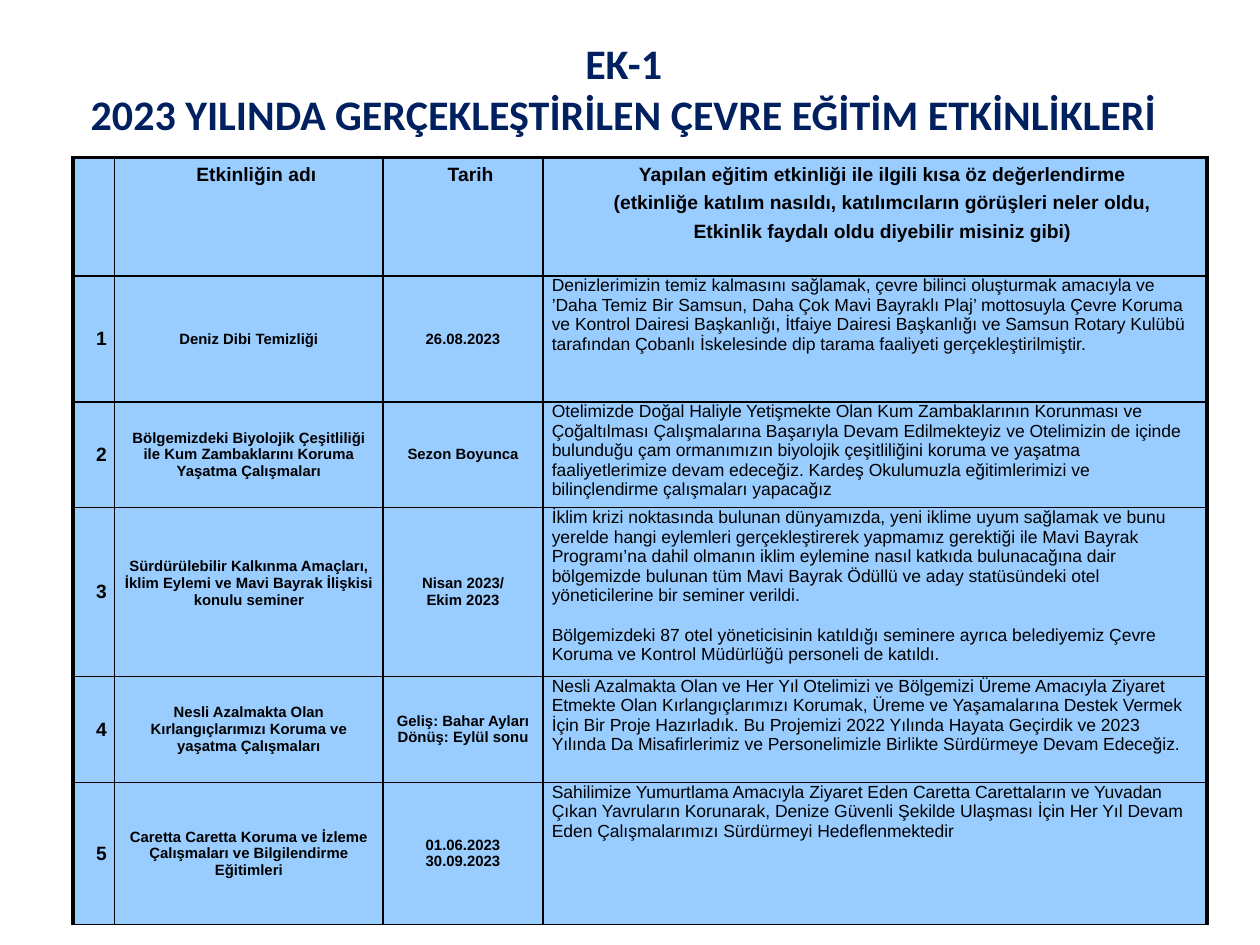
from dataclasses import dataclass

from lxml.etree import SubElement
from pptx import Presentation
from pptx.dml.color import RGBColor
from pptx.enum.text import MSO_ANCHOR, MSO_AUTO_SIZE, PP_ALIGN
from pptx.oxml.ns import qn
from pptx.util import Inches, Pt


@dataclass(frozen=True)
class Theme:
    navy: str = "002060"
    ink: str = "000000"
    sky: str = "99CCFF"
    head: str = "Calibri"
    body: str = "Arial"
    title: float = 24
    label: float = 11
    name: float = 8.5
    note: float = 10
    thin: float = 1
    thick: float = 2.25


@dataclass(frozen=True)
class Style:
    size: float
    bold: bool = True
    align: PP_ALIGN = PP_ALIGN.CENTER
    font: str = Theme.body
    color: str = Theme.ink
    indent: float = 0
    gap: float = 0


T = Theme()
WIDE, HIGH = 10, 7.5
COLS = [0.33, 2.13, 1.27, 5.27]
ROWS = [0.94, 1, 0.84, 1.34, 0.84, 1.13]

TITLE = Style(T.title, font=T.head, color=T.navy)
LABEL = Style(T.label, indent=0.12, gap=4)
NAME = Style(T.name)
NOTE = Style(T.note, bold=False, align=PP_ALIGN.LEFT, gap=11.5)

HEADS = [
    [],
    ["Etkinliğin adı"],
    ["Tarih"],
    [
        "Yapılan eğitim etkinliği ile ilgili kısa öz değerlendirme",
        "(etkinliğe katılım nasıldı, katılımcıların görüşleri neler oldu,",
        "Etkinlik faydalı oldu diyebilir misiniz gibi)",
    ],
]

EVENTS = [
    (
        ["Deniz Dibi Temizliği"],
        ["26.08.2023"],
        ["Denizlerimizin temiz kalmasını sağlamak, çevre bilinci oluşturmak amacıyla ve "
         "’Daha Temiz Bir Samsun, Daha Çok Mavi Bayraklı Plaj’ mottosuyla Çevre Koruma "
         "ve Kontrol Dairesi Başkanlığı, İtfaiye Dairesi Başkanlığı ve Samsun Rotary Kulübü "
         "tarafından Çobanlı İskelesinde dip tarama faaliyeti gerçekleştirilmiştir."],
    ),
    (
        ["Bölgemizdeki Biyolojik Çeşitliliği ile Kum Zambaklarını Koruma Yaşatma Çalışmaları"],
        ["Sezon Boyunca"],
        ["Otelimizde Doğal Haliyle Yetişmekte Olan Kum Zambaklarının Korunması ve "
         "Çoğaltılması Çalışmalarına Başarıyla Devam Edilmekteyiz ve Otelimizin de içinde "
         "bulunduğu çam ormanımızın biyolojik çeşitliliğini koruma ve yaşatma "
         "faaliyetlerimize devam edeceğiz. Kardeş Okulumuzla eğitimlerimizi ve "
         "bilinçlendirme çalışmaları yapacağız"],
    ),
    (
        ["Sürdürülebilir Kalkınma Amaçları, İklim Eylemi ve Mavi Bayrak İlişkisi konulu seminer"],
        ["Nisan 2023/", "Ekim 2023"],
        ["İklim krizi noktasında bulunan dünyamızda, yeni iklime uyum sağlamak ve bunu "
         "yerelde hangi eylemleri gerçekleştirerek yapmamız gerektiği ile Mavi Bayrak "
         "Programı’na dahil olmanın iklim eylemine nasıl katkıda bulunacağına dair "
         "bölgemizde bulunan tüm Mavi Bayrak Ödüllü ve aday statüsündeki otel "
         "yöneticilerine bir seminer verildi.",
         "Bölgemizdeki 87 otel yöneticisinin katıldığı seminere ayrıca belediyemiz Çevre "
         "Koruma ve Kontrol Müdürlüğü personeli de katıldı."],
    ),
    (
        ["Nesli Azalmakta Olan Kırlangıçlarımızı Koruma ve yaşatma Çalışmaları"],
        ["Geliş: Bahar Ayları", "Dönüş: Eylül sonu"],
        ["Nesli Azalmakta Olan ve Her Yıl Otelimizi ve Bölgemizi Üreme Amacıyla Ziyaret "
         "Etmekte Olan Kırlangıçlarımızı Korumak, Üreme ve Yaşamalarına Destek Vermek "
         "İçin Bir Proje Hazırladık. Bu Projemizi 2022 Yılında Hayata Geçirdik ve 2023 "
         "Yılında Da Misafirlerimiz ve Personelimizle Birlikte Sürdürmeye Devam Edeceğiz."],
    ),
    (
        ["Caretta Caretta Koruma ve İzleme Çalışmaları ve Bilgilendirme Eğitimleri"],
        ["01.06.2023", "30.09.2023"],
        ["Sahilimize Yumurtlama Amacıyla Ziyaret Eden Caretta Carettaların ve Yuvadan "
         "Çıkan Yavruların Korunarak, Denize Güvenli Şekilde Ulaşması İçin Her Yıl Devam "
         "Eden Çalışmalarımızı Sürdürmeyi Hedeflenmektedir"],
    ),
]


def write(frame, lines, style):
    for i, line in enumerate(lines):
        para = frame.add_paragraph() if i else frame.paragraphs[0]
        para.alignment = style.align
        if style.indent:
            props = para._p.get_or_add_pPr()
            props.set("marL", str(Inches(style.indent)))
            props.set("indent", "0")
        if i and style.gap:
            para.space_before = Pt(style.gap)
        run = para.add_run()
        run.text = line
        run.font.name = style.font
        run.font.size = Pt(style.size)
        run.font.bold = style.bold
        run.font.color.rgb = RGBColor.from_string(style.color)


def border(cell, row, col):
    edges = {"lnL": col == 0, "lnR": col == len(COLS) - 1, "lnT": row == 0, "lnB": False}
    props = cell._tc.get_or_add_tcPr()
    for tag, outer in edges.items():
        line = SubElement(props, qn("a:" + tag), w=str(Pt(T.thick if outer else T.thin)))
        fill = SubElement(line, qn("a:solidFill"))
        SubElement(fill, qn("a:srgbClr"), val=T.ink)


def heading(slide, box, lines):
    shape = slide.shapes.add_textbox(*map(Inches, box))
    frame = shape.text_frame
    frame.word_wrap = False
    frame.auto_size = MSO_AUTO_SIZE.SHAPE_TO_FIT_TEXT
    write(frame, lines, TITLE)


def grid(slide, box, heads, events):
    left, top, wide, high = box
    table = slide.shapes.add_table(
        len(ROWS), len(COLS), *map(Inches, box)).table
    table.first_row = table.horz_banding = False
    for col, part in zip(table.columns, COLS):
        col.width = Inches(wide * part / sum(COLS))
    for row, part in zip(table.rows, ROWS):
        row.height = Inches(high * part / sum(ROWS))
    data = [heads] + [([str(n)], *event) for n, event in enumerate(events, 1)]
    for r, cells in enumerate(data):
        for c, lines in enumerate(cells):
            cell = table.cell(r, c)
            border(cell, r, c)
            cell.fill.solid()
            cell.fill.fore_color.rgb = RGBColor.from_string(T.sky)
            if r and c:
                cell.margin_left = cell.margin_right = Inches(0.07)
                cell.margin_top = cell.margin_bottom = 0
            if r and c < 3:
                cell.vertical_anchor = MSO_ANCHOR.MIDDLE
            style = (LABEL, NAME, NAME, NOTE)[c] if r else LABEL
            write(cell.text_frame, lines, style)
    table.cell(3, 1).margin_bottom = Inches(0.14)


def main():
    deck = Presentation()
    deck.slide_width, deck.slide_height = Inches(WIDE), Inches(HIGH)
    slide = deck.slides.add_slide(deck.slide_layouts[6])
    left = 0.058 * WIDE
    heading(slide, (left, HIGH / 30, 0.874 * WIDE, 0.91),
            ["EK-1", "2023 YILINDA GERÇEKLEŞTİRİLEN ÇEVRE EĞİTİM ETKİNLİKLERİ"])
    grid(slide, (left, HIGH / 6, sum(COLS), sum(ROWS)), HEADS, EVENTS)
    deck.save("out.pptx")


if __name__ == "__main__":
    main()
